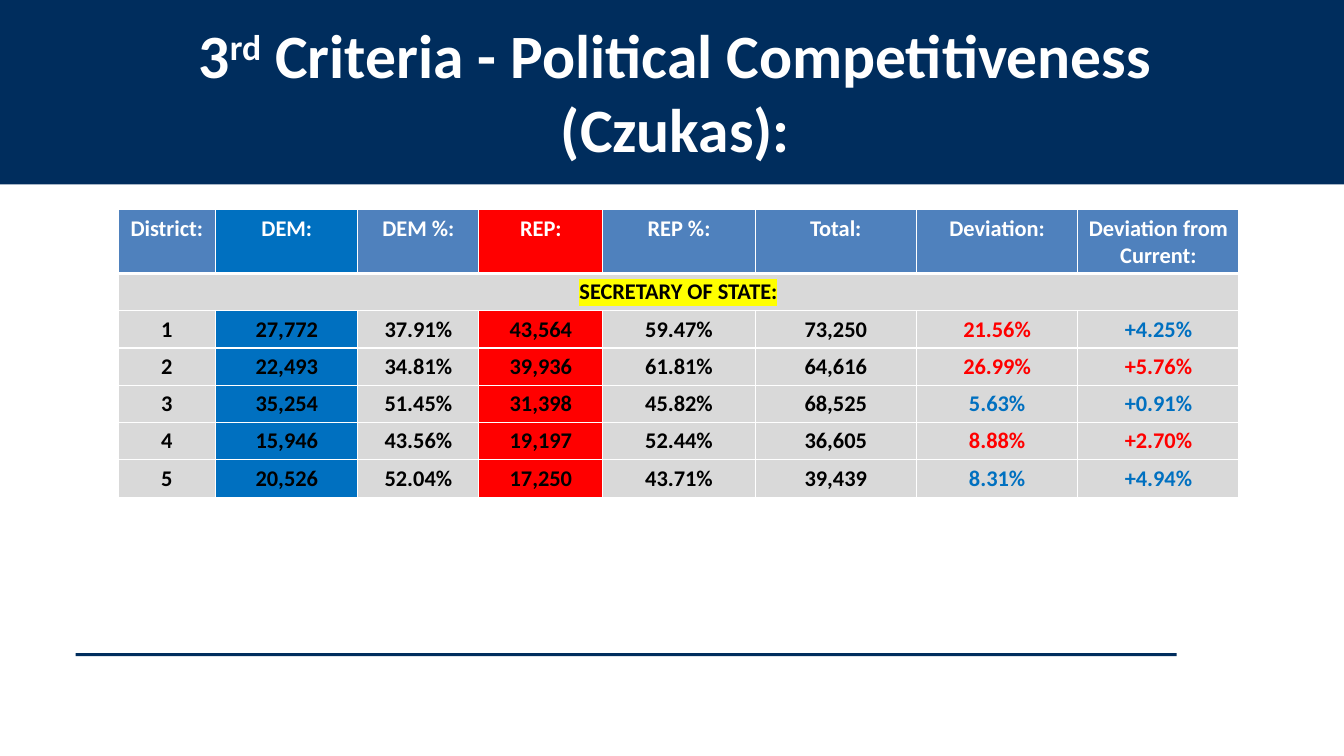
from lxml import etree
from pptx import Presentation, util as u
from pptx.dml.color import RGBColor
from pptx.enum import shapes, text
from pptx.oxml.ns import qn

NAVY, WHITE, BLACK = "002D5D", "FFFFFF", "000000"
BLUE, RED, GRAY, HEADER, YELLOW = "0070C0", "FF0000", "D9D9D9", "4F81BD", "FFFF00"
TITLE = [[("3", 0), ("rd", 30000), (" Criteria - Political Competitiveness", 0)],
         [("(Czukas):", 0)]]
HEADINGS = ["District:", "DEM:", "DEM %:", "REP:", "REP %:", "Total:",
            "Deviation:", "Deviation from Current:"]
SECTION = "SECRETARY OF STATE:"
RESULTS = [
    ("1", "27,772", "37.91%", "43,564", "59.47%", "73,250", "21.56%", "+4.25%"),
    ("2", "22,493", "34.81%", "39,936", "61.81%", "64,616", "26.99%", "+5.76%"),
    ("3", "35,254", "51.45%", "31,398", "45.82%", "68,525", "5.63%", "+0.91%"),
    ("4", "15,946", "43.56%", "19,197", "52.44%", "36,605", "8.88%", "+2.70%"),
    ("5", "20,526", "52.04%", "17,250", "43.71%", "39,439", "8.31%", "+4.94%"),
]
DEVIATION_COLORS = [(RED, BLUE), (RED, RED), (BLUE, BLUE), (RED, RED), (BLUE, BLUE)]
PARTY_FILLS = {1: BLUE, 3: RED}
COLUMN_WIDTHS = [0.97, 1.41, 1.2, 1.23, 1.51, 1.6, 1.6, 1.6]
ROW_HEIGHT = 0.37


def paint(target, color):
    target.solid()
    target.fore_color.rgb = RGBColor.from_string(color)


def add_bar(page, left, top, width, height):
    bar = page.shapes.add_shape(shapes.MSO_SHAPE.RECTANGLE, *map(u.Inches, (left, top, width, height)))
    bar.shadow.inherit = False
    paint(bar.fill, NAVY)
    bar.line.fill.background()


def add_span(para, words, size, color):
    para.alignment = text.PP_ALIGN.CENTER
    span = para.add_run()
    span.text = words
    span.font.size = u.Pt(size)
    span.font.bold = True
    span.font.name = "Calibri"
    paint(span.font.fill, color)
    return span


def highlight(span, color):
    mark = etree.Element(qn("a:highlight"))
    etree.SubElement(mark, qn("a:srgbClr"), val=color)
    span.font._element.find(qn("a:solidFill")).addnext(mark)


def add_borders(cell, top, bottom):
    properties = cell._tc.get_or_add_tcPr()
    for side, points in (("L", 1), ("R", 1), ("T", top), ("B", bottom)):
        line = etree.SubElement(properties, qn("a:ln" + side), w=str(u.Pt(points)))
        fill = etree.SubElement(line, qn("a:solidFill"))
        etree.SubElement(fill, qn("a:srgbClr"), val=WHITE)


def add_title(page):
    box = page.shapes.add_textbox(*map(u.Inches, (0.56, 0.12, 11.78, 2.32)))
    frame = box.text_frame
    frame.word_wrap = True
    for index, parts in enumerate(TITLE):
        para = frame.add_paragraph() if index else frame.paragraphs[0]
        para.level = 1
        properties = para._p.get_or_add_pPr()
        properties.set("marL", str(u.Inches(0.5)))
        properties.set("indent", "0")
        for words, baseline in parts:
            span = add_span(para, words, 44, WHITE)
            if baseline:
                span.font._element.set("baseline", str(baseline))


def add_results(page):
    rows = [HEADINGS, [SECTION] + [""] * 7, *RESULTS]
    table = page.shapes.add_table(
        len(rows), len(HEADINGS), u.Inches(1.17), u.Inches(2.08),
        u.Inches(sum(COLUMN_WIDTHS)), u.Inches(ROW_HEIGHT * len(rows))).table
    for column, width in zip(table.columns, COLUMN_WIDTHS):
        column.width = u.Inches(width)
    for r, values in enumerate(rows):
        table.rows[r].height = u.Inches(ROW_HEIGHT)
        for c, value in enumerate(values):
            cell = table.cell(r, c)
            add_borders(cell, 3 if r == 1 else 1, 3 if r == 0 else 1)
            base = GRAY if r else HEADER
            paint(cell.fill, base if r == 1 else PARTY_FILLS.get(c, base))
            color = BLACK if r else WHITE
            if r > 1 and c > 5:
                color = DEVIATION_COLORS[r - 2][c - 6]
            if value:
                span = add_span(cell.text_frame.paragraphs[0], value, 16, color)
                if r == 1:
                    highlight(span, YELLOW)
    table.cell(1, 0).merge(table.cell(1, len(HEADINGS) - 1))


def main():
    deck = Presentation()
    deck.slide_width, deck.slide_height = u.Inches(13.33), u.Inches(7.5)
    page = deck.slides.add_slide(deck.slide_layouts[6])
    add_bar(page, 0, -0.03, 13.33, 1.86)
    add_bar(page, 0.75, 6.48, 10.92, 0.03)
    add_title(page)
    add_results(page)
    deck.save("out.pptx")


if __name__ == "__main__":
    main()
